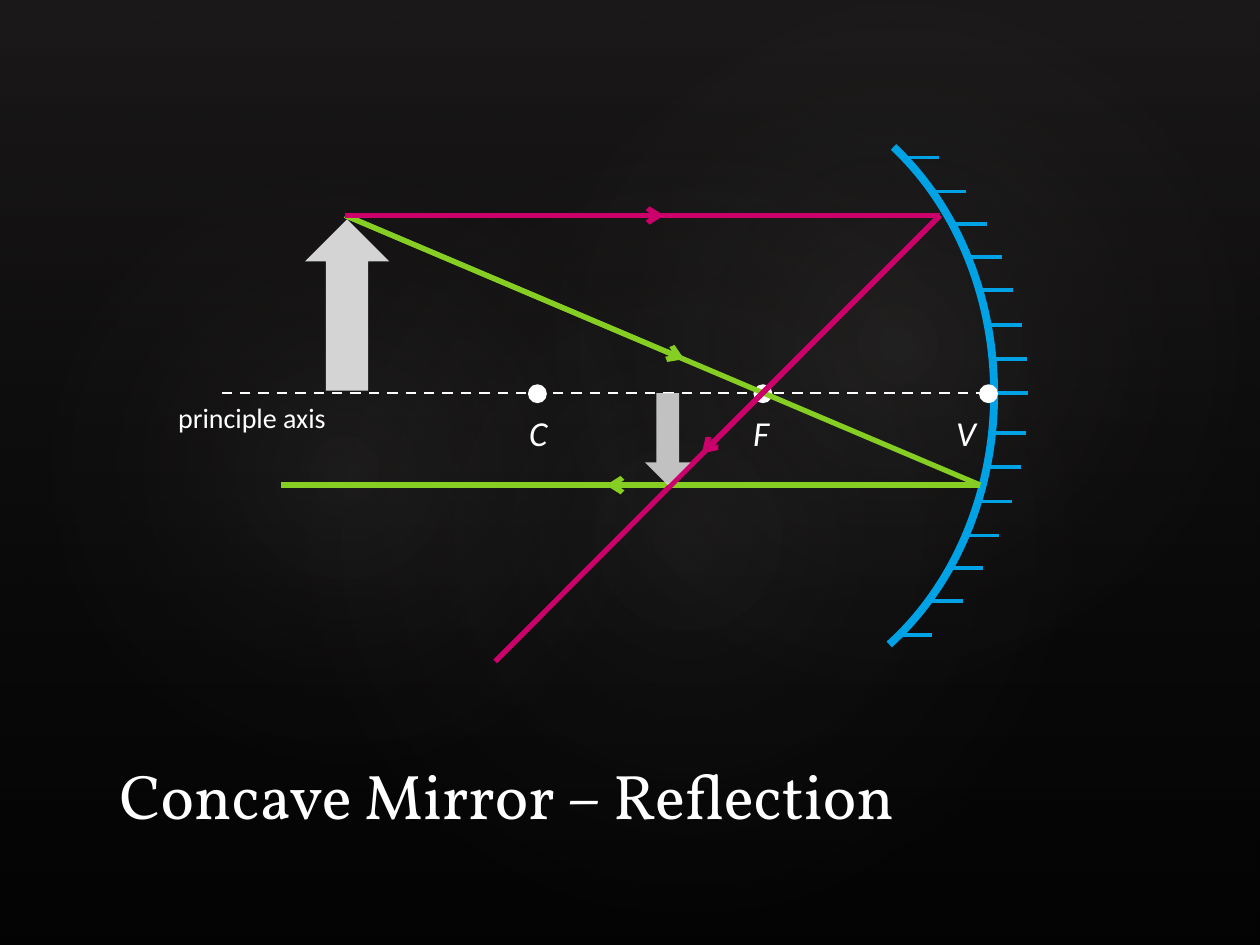
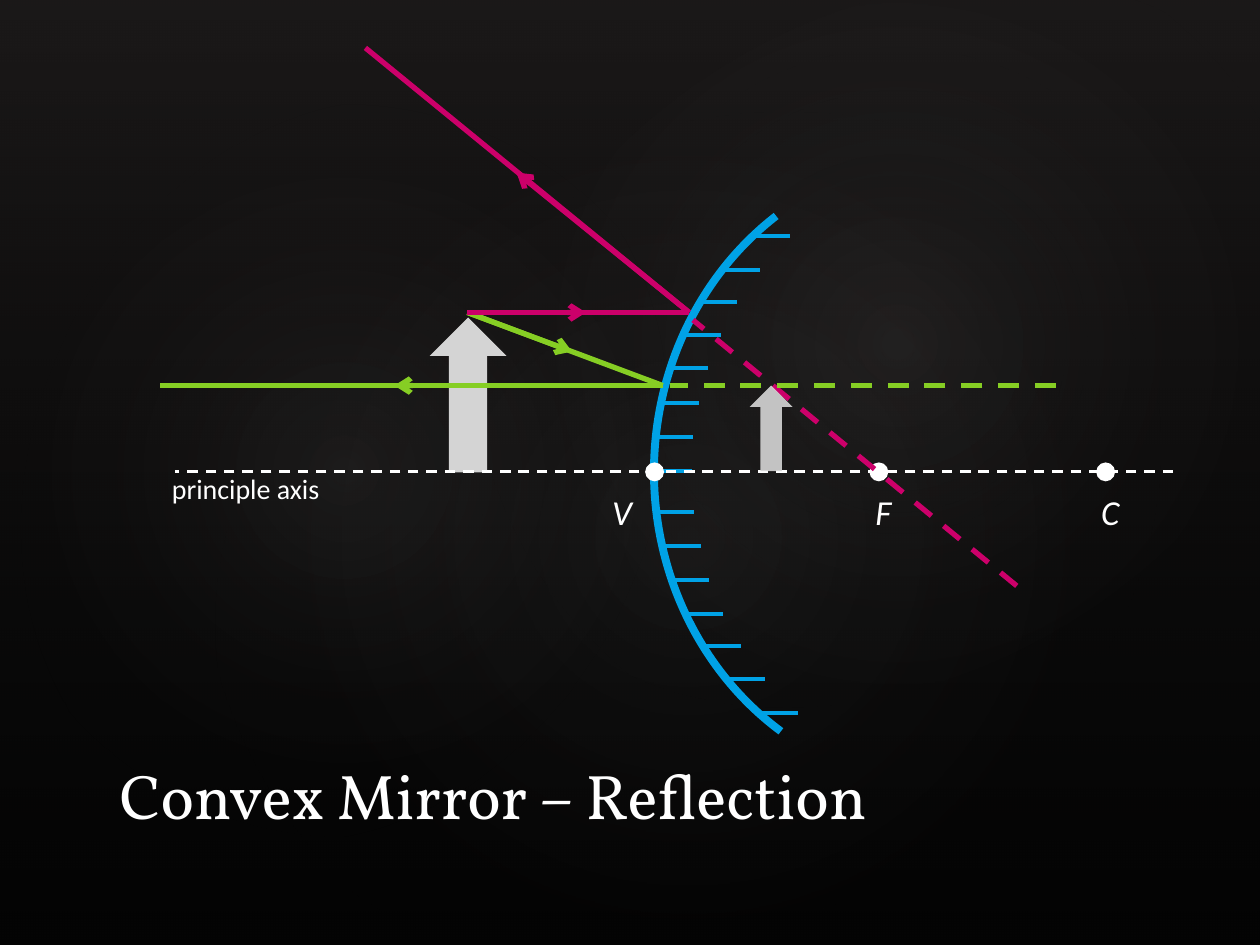
import math

from lxml import etree
from pptx import Presentation
from pptx.dml.color import RGBColor
from pptx.enum.dml import MSO_LINE
from pptx.enum.shapes import MSO_CONNECTOR, MSO_SHAPE
from pptx.enum.text import MSO_ANCHOR, MSO_AUTO_SIZE, PP_ALIGN
from pptx.oxml.ns import qn
from pptx.util import Emu, Pt

RECTANGLE, ELLIPSE = MSO_SHAPE.RECTANGLE, MSO_SHAPE.OVAL
ARC, UP_ARROW = MSO_SHAPE.ARC, MSO_SHAPE.UP_ARROW
STRAIGHT, DASH = MSO_CONNECTOR.STRAIGHT, MSO_LINE.DASH
LEFT, CENTER = PP_ALIGN.LEFT, PP_ALIGN.CENTER
TOP, BOTTOM = MSO_ANCHOR.TOP, MSO_ANCHOR.BOTTOM
FIT_SHAPE, NO_FIT = MSO_AUTO_SIZE.SHAPE_TO_FIT_TEXT, MSO_AUTO_SIZE.NONE

EMU_PER_PX = 9144
WIDTH, HEIGHT = 1000, 750

BLACK, WHITE, GREY = "000000", "FFFFFF", "D4D4D4"
BLUE, GREEN, PINK = "00A2E6", "86CE24", "CC006A"
BODY_FONT, TITLE_FONT = "Calibri", "Vollkorn"

GLOWS = [
    ((150, 114, 792, 624), 328.7, 7),
    ((-30, 128, 606, 490), 294.3, 8),
    ((358, 13, 709, 520), 328.7, 8),
]
HATCH_OFFSETS = [-187, -160, -134, -108, -82, -54, -27, 0,
                 32, 59, 86, 113, 139, 165, 192]
ARC_ANGLES = (182.407, 34.257)
LABEL_WIDTHS = {"C": 42, "F": 40, "V": 43}


def px(length):
    return Emu(round(length * EMU_PER_PX))


def rgb(color):
    return RGBColor.from_string(color)


def set_alpha(color_element, percent):
    etree.SubElement(color_element, qn("a:alpha"), val=str(percent * 1000))


class MirrorDeck:
    def __init__(self):
        self.presentation = Presentation()
        self.presentation.slide_width = px(WIDTH)
        self.presentation.slide_height = px(HEIGHT)
        self.slide = None

    def add_slide(self, title):
        layout = self.presentation.slide_layouts[6]
        self.slide = self.presentation.slides.add_slide(layout)
        background = self.slide.background.fill
        background.solid()
        background.fore_color.rgb = rgb(BLACK)
        veil = self.shape(RECTANGLE, (0, 0, WIDTH, HEIGHT))
        self.gradient(veil, [(0, "4B4545", 36), (1, "282828", 10)])
        for box, rotation, alpha in GLOWS:
            glow = self.shape(ELLIPSE, box)
            glow.rotation = rotation
            stops = [(0, "BFB9B9", alpha), (0.58, "282828", 0)]
            self.gradient(glow, stops, radial=True)
        self.text(title, (85, 595, 825, 70), 36, TITLE_FONT,
                  anchor=BOTTOM, fit=NO_FIT)

    def shape(self, kind, box, color=None, alpha=None):
        shape = self.slide.shapes.add_shape(kind, *map(px, box))
        shape.shadow.inherit = False
        shape.line.fill.background()
        if color:
            shape.fill.solid()
            shape.fill.fore_color.rgb = rgb(color)
        else:
            shape.fill.background()
        if alpha:
            set_alpha(next(shape._element.spPr.iter(qn("a:srgbClr"))), alpha)
        return shape

    def gradient(self, shape, stops, radial=False):
        shape.fill.gradient()
        shape.fill.gradient_angle = 270
        for stop, (position, color, _) in zip(shape.fill.gradient_stops, stops):
            stop.position = position
            stop.color.rgb = rgb(color)
        element = shape._element.spPr.find(qn("a:gradFill"))
        for color_element, (_, _, alpha) in zip(element.iter(qn("a:srgbClr")), stops):
            set_alpha(color_element, alpha)
        if radial:
            linear = element.find(qn("a:lin"))
            circle = etree.Element(qn("a:path"), path="circle")
            element.replace(linear, circle)
            sides = dict.fromkeys("ltrb", "50000")
            etree.SubElement(circle, qn("a:fillToRect"), sides)

    def text(self, words, box, size, font=BODY_FONT, italic=False,
             align=LEFT, anchor=TOP, wrap=True, fit=FIT_SHAPE):
        frame = self.slide.shapes.add_textbox(*map(px, box)).text_frame
        frame.word_wrap = wrap
        frame.auto_size = fit
        frame.vertical_anchor = anchor
        paragraph = frame.paragraphs[0]
        paragraph.alignment = align
        run = paragraph.add_run()
        run.text = words
        run.font.name = font
        run.font.size = Pt(size)
        run.font.italic = italic
        run.font.color.rgb = rgb(WHITE)

    def line(self, start, end, color, weight=3, dashed=False, arrow=False):
        connector = self.slide.shapes.add_connector(
            STRAIGHT, *map(px, (*start, *end)))
        connector.line.color.rgb = rgb(color)
        connector.line.width = Pt(weight)
        if dashed:
            connector.line.dash_style = DASH
        properties = connector._element.spPr
        if arrow:
            outline = properties.find(qn("a:ln"))
            etree.SubElement(outline, qn("a:tailEnd"), type="arrow")
        etree.SubElement(properties, qn("a:effectLst"))

    def ray(self, start, end, arrow_tip, color):
        self.line(start, end, color)
        self.line(start, arrow_tip, color, arrow=True)

    def mirror(self, box, hatch_length, convex=False):
        left, top, width, height = box
        arc = self.shape(ARC, box)
        for index, angle in enumerate(ARC_ANGLES):
            arc.adjustments[index] = angle
        arc.line.color.rgb = rgb(BLUE)
        arc.line.width = Pt(4.5)
        if convex:
            arc._element.spPr.find(qn("a:xfrm")).set("flipH", "1")
        side = -1 if convex else 1
        for offset in HATCH_OFFSETS:
            reach = width / 2 * math.sqrt(1 - (2 * offset / height) ** 2)
            x = round(left + width / 2 + side * reach)
            y = top + height // 2 + offset
            self.line((x, y), (x + hatch_length, y), BLUE, 2.25)

    def axis(self, left, right, y, label_left, label_top):
        self.line((right, y), (left, y), WHITE, 1.5, dashed=True)
        self.text("principle axis", (label_left, label_top, 238, 37), 16,
                  align=CENTER)

    def point(self, name, dot_left, label_left, axis_y):
        self.shape(ELLIPSE, (dot_left, axis_y - 7, 15, 15), WHITE)
        self.text(name, (label_left, axis_y + 10, LABEL_WIDTHS[name], 44), 20,
                  italic=True, wrap=False)


def add_concave(deck):
    axis_y = 312
    tip, top_hit, low_hit = (274, 171), (746, 171), (778, 385)
    deck.add_slide("Concave Mirror – Reflection")
    deck.mirror((365, 62, 424, 501), 27)
    deck.axis(172, 783, axis_y, 81, 313)
    for name, dot_left, label_left in [("C", 419, 410), ("V", 777, 749),
                                       ("F", 598, 588)]:
        deck.point(name, dot_left, label_left, axis_y)
    deck.ray(tip, low_hit, (543, 285), GREEN)
    deck.ray(low_hit, (223, 385), (481, 385), GREEN)
    deck.ray(top_hit, (393, 525), (557, 360), PINK)
    deck.ray(tip, top_hit, (527, 171), PINK)
    deck.shape(UP_ARROW, (242, 174, 67, 136), GREY)
    image_arrow = deck.shape(UP_ARROW, (512, 312, 36, 73), GREY, 90)
    image_arrow.rotation = 180


def add_convex(deck):
    axis_y = 374
    tip, top_hit, low_hit = (371, 248), (547, 248), (526, 306)
    deck.add_slide("Convex Mirror – Reflection")
    deck.shape(UP_ARROW, (341, 252, 61, 123), GREY)
    deck.mirror((519, 124, 468, 501), 30, convex=True)
    deck.axis(139, 931, axis_y, 76, 369)
    for name, dot_left, label_left in [("C", 870, 864), ("V", 512, 476),
                                       ("F", 690, 685)]:
        deck.point(name, dot_left, label_left, axis_y)
    deck.ray(tip, low_hit, (454, 279), GREEN)
    deck.ray(low_hit, (127, 306), (313, 306), GREEN)
    deck.ray(top_hit, (290, 38), (410, 137), PINK)
    deck.line((807, 465), (550, 254), PINK, dashed=True)
    deck.ray(tip, top_hit, (465, 248), PINK)
    deck.line((838, 306), (532, 306), GREEN, dashed=True)
    deck.shape(UP_ARROW, (595, 306, 34, 68), GREY, 91)


def main():
    deck = MirrorDeck()
    add_concave(deck)
    add_convex(deck)
    deck.presentation.save("out.pptx")


if __name__ == "__main__":
    main()
